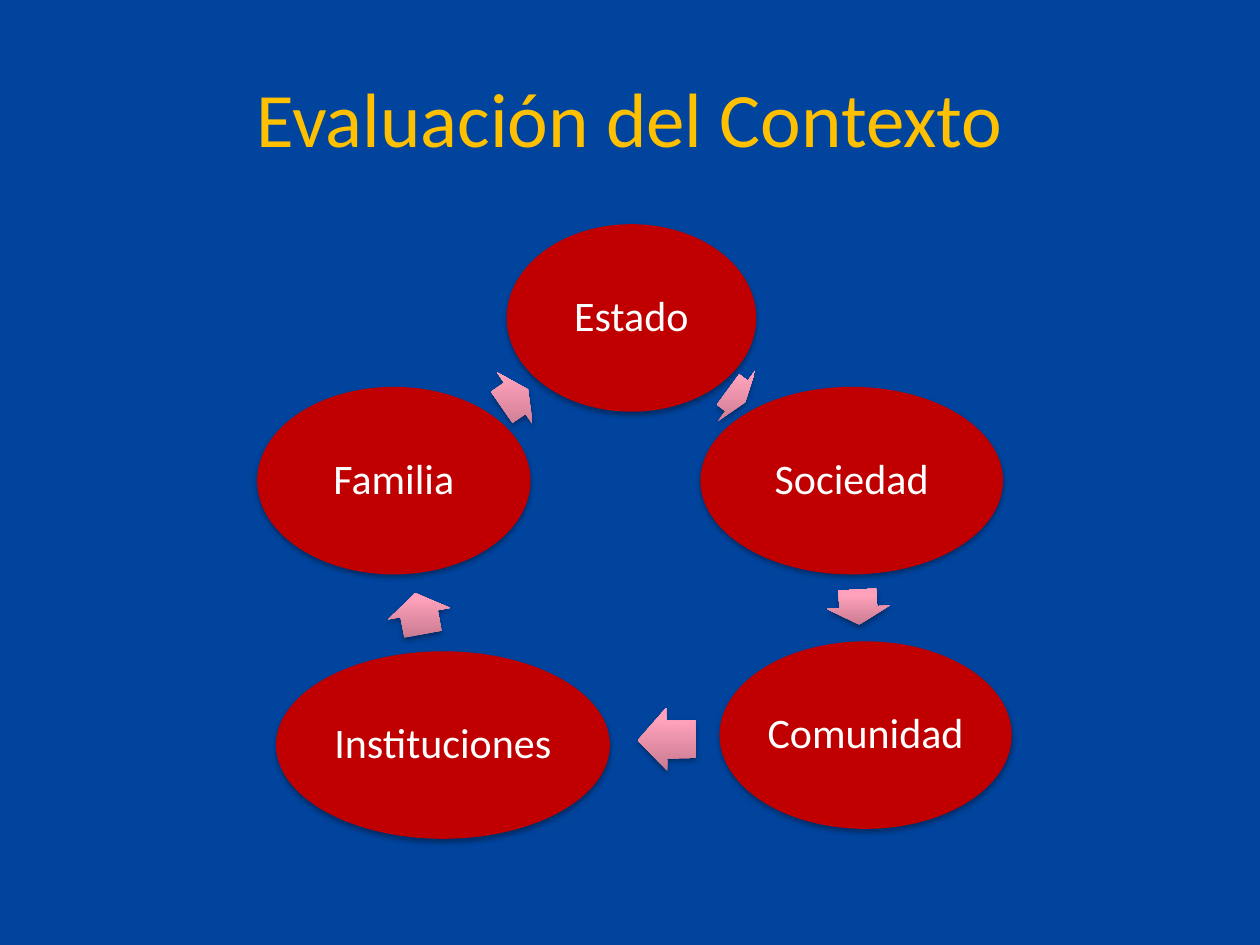
from math import atan2, degrees
from lxml.etree import fromstring
from pptx import Presentation
from pptx.dml.color import RGBColor
from pptx.enum.shapes import MSO_SHAPE as Kind
from pptx.enum.text import MSO_ANCHOR as Anchor, PP_ALIGN as Align
from pptx.util import Cm, Pt

TITLE = "Evaluación del Contexto"
NODES = [
    ("Estado", 12.73, 6.41, 5.03),
    ("Sociedad", 17.17, 9.69, 6.1),
    ("Comunidad", 17.45, 14.82, 5.89),
    ("Instituciones", 8.93, 15.02, 6.73),
    ("Familia", 7.94, 9.69, 5.51),
]
ARROWS = [
    (14.85, 7.98, 0.43),
    (17.3, 12.24, 0.71),
    (13.44, 14.91, 1.17),
    (8.45, 12.37, 0.84),
    (10.38, 8.03, 0.64),
]
STOPS = [(0, "C7798F"), (80, "FFA1BB"), (100, "FFA3BD")]
TALL, HEAD, INSET = 3.78, 1.27, 0.08
NS = 'xmlns:a="http://schemas.openxmlformats.org/drawingml/2006/main"'


def color(text):
    return RGBColor.from_string(text)


def paint(fill, text):
    fill.solid()
    fill.fore_color.rgb = color(text)


def write(shape, text, size, tint):
    frame = shape.text_frame
    frame.vertical_anchor = Anchor.MIDDLE
    para = frame.paragraphs[0]
    para.text = text
    para.alignment = Align.CENTER
    para.font.name = "Calibri"
    para.font.size = Pt(size)
    para.font.color.rgb = color(tint)
    return frame


def shade(shape):
    shape.shadow.inherit = False
    effects = shape.element.spPr.find("{*}effectLst")
    effects.append(fromstring(
        f'<a:outerShdw {NS} blurRad="{Pt(3.1)}" dist="{Pt(1.8)}" dir="5400000" '
        'rotWithShape="0"><a:srgbClr val="000000"><a:alpha val="35000"/>'
        '</a:srgbClr></a:outerShdw>'))


def blend(shape):
    stops = "".join(
        f'<a:gs pos="{pos * 1000}"><a:srgbClr val="{tint}"/></a:gs>'
        for pos, tint in STOPS)
    grad = fromstring(
        f'<a:gradFill {NS} rotWithShape="0"><a:gsLst>{stops}</a:gsLst>'
        '<a:lin ang="16200000" scaled="0"/></a:gradFill>')
    shape.element.spPr.find("{*}prstGeom").addnext(grad)


def place(slide, kind, x, y, wide, tall):
    shape = slide.shapes.add_shape(
        kind, Cm(x - wide / 2), Cm(y - tall / 2), Cm(wide), Cm(tall))
    shape.line.fill.background()
    shade(shape)
    return shape


def main():
    deck = Presentation()
    deck.slide_width, deck.slide_height = Cm(25.4), Cm(19.05)
    slide = deck.slides.add_slide(deck.slide_layouts[6])
    paint(slide.background.fill, "00449E")

    title = slide.shapes.add_textbox(Cm(1.27), Cm(0.76), Cm(22.86), Cm(3.18))
    write(title, TITLE, 44, "FFC000").word_wrap = True

    nexts = NODES[1:] + NODES[:1]
    for node, after, (x, y, wide) in zip(NODES, nexts, ARROWS):
        name, left, top, span = node
        oval = place(slide, Kind.OVAL, left, top, span, TALL)
        paint(oval.fill, "C00000")
        frame = write(oval, name, 24, "FFFFFF")
        frame.word_wrap = False
        frame.margin_left = frame.margin_right = Cm(INSET)
        frame.margin_top = frame.margin_bottom = Cm(INSET)
        frame.paragraphs[0].line_spacing = 0.9

        arrow = place(slide, Kind.RIGHT_ARROW, x, y, wide, HEAD)
        arrow.adjustments[0] = 0.6
        arrow.adjustments[1] = 0.5
        arrow.rotation = degrees(atan2(after[2] - top, after[1] - left)) % 360
        blend(arrow)

    deck.save("out.pptx")


if __name__ == "__main__":
    main()
